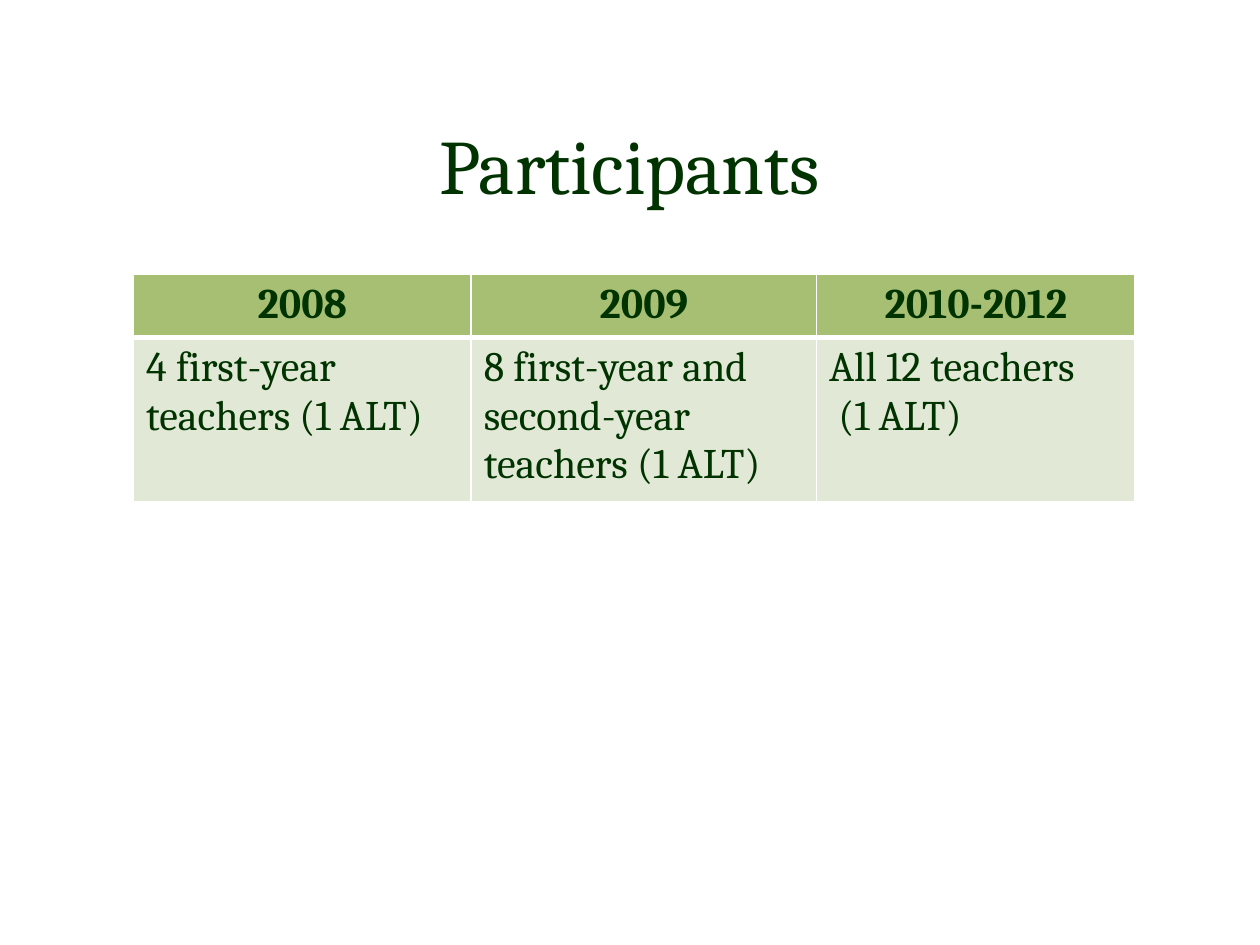
from lxml import etree
from pptx import Presentation
from pptx.dml.color import RGBColor
from pptx.enum.text import MSO_ANCHOR, PP_ALIGN
from pptx.oxml.ns import qn
from pptx.util import Inches, Pt

CENTER, LEFT = PP_ALIGN.CENTER, PP_ALIGN.LEFT
MIDDLE = MSO_ANCHOR.MIDDLE
FONT = "Cambria"
DARK_GREEN, HEADER_GREEN, PALE_GREEN, WHITE = "003300", "A6BF73", "E1E8D5", "FFFFFF"

COLUMN_WIDTHS = [2.68, 2.74, 2.53]
ROW_HEIGHT = 0.41
# Each cell is a list of paragraphs
HEADERS = [["2008"], ["2009"], ["2010-2012"]]
PARTICIPANTS = [
    ["4 first-year teachers (1 ALT)"],
    ["8 first-year and second-year teachers (1 ALT)"],
    ["All 12 teachers", " (1 ALT)"],
]


def color(value):
    return RGBColor.from_string(value)


def write_text(frame, lines, size, alignment, bold=False):
    for index, line in enumerate(lines):
        paragraph = frame.paragraphs[0] if index == 0 else frame.add_paragraph()
        paragraph.alignment = alignment
        run = paragraph.add_run()
        run.text = line
        run.font.name = FONT
        run.font.size = Pt(size)
        run.font.bold = bold
        run.font.color.rgb = color(DARK_GREEN)


def set_borders(cell, widths):
    """Draw white borders; widths are left, right, top and bottom in points."""
    properties = cell._tc.get_or_add_tcPr()
    for index, (side, width) in enumerate(zip(("lnL", "lnR", "lnT", "lnB"), widths)):
        line = etree.Element(qn(f"a:{side}"), w=str(Pt(width)))
        fill = etree.SubElement(line, qn("a:solidFill"))
        etree.SubElement(fill, qn("a:srgbClr"), val=WHITE)
        properties.insert(index, line)


def add_title(slide, left, top, width, height):
    box = slide.shapes.add_textbox(Inches(left), Inches(top), Inches(width), Inches(height))
    frame = box.text_frame
    frame.word_wrap = True
    frame.vertical_anchor = MIDDLE
    write_text(frame, ["Participants"], 44, CENTER)


def add_participants_table(slide, left, top):
    rows = [HEADERS, PARTICIPANTS]
    table = slide.shapes.add_table(
        len(rows), len(COLUMN_WIDTHS), Inches(left), Inches(top),
        Inches(sum(COLUMN_WIDTHS)), Inches(ROW_HEIGHT * len(rows))).table
    for column, width in zip(table.columns, COLUMN_WIDTHS):
        column.width = Inches(width)

    for row_index, row in enumerate(rows):
        is_header = row_index == 0
        for column_index, lines in enumerate(row):
            cell = table.cell(row_index, column_index)
            cell.fill.solid()
            cell.fill.fore_color.rgb = color(HEADER_GREEN if is_header else PALE_GREEN)
            set_borders(cell, (1, 1, 1, 3) if is_header else (1, 1, 3, 1))
            write_text(cell.text_frame, lines, 24, CENTER if is_header else LEFT, is_header)


def main():
    presentation = Presentation()
    presentation.slide_width, presentation.slide_height = Inches(10), Inches(7.5)
    slide = presentation.slides.add_slide(presentation.slide_layouts[6])
    slide.background.fill.solid()
    slide.background.fill.fore_color.rgb = color(WHITE)

    add_title(slide, 0.75, 0.67, 8.5, 1.25)
    add_participants_table(slide, 1.06, 2.18)
    presentation.save("out.pptx")


if __name__ == "__main__":
    main()
